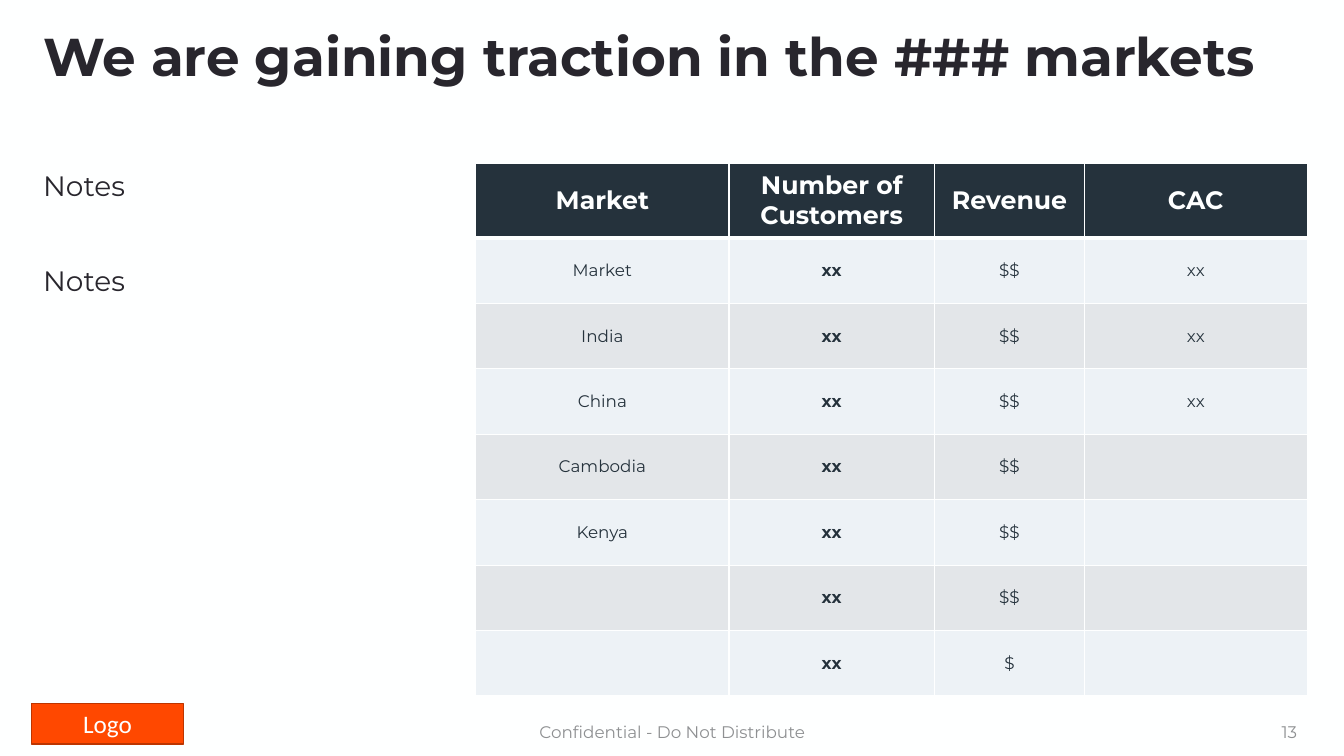
from dataclasses import dataclass

from lxml import etree
from pptx import Presentation
from pptx.dml.color import RGBColor
from pptx.enum.shapes import MSO_SHAPE
from pptx.enum.text import MSO_ANCHOR, MSO_AUTO_SIZE, PP_ALIGN
from pptx.oxml.ns import qn
from pptx.util import Cm, Pt

LEFT, CENTER, RIGHT = PP_ALIGN.LEFT, PP_ALIGN.CENTER, PP_ALIGN.RIGHT
TOP, MIDDLE = MSO_ANCHOR.TOP, MSO_ANCHOR.MIDDLE
NO_AUTOFIT = MSO_AUTO_SIZE.NONE
RECTANGLE = MSO_SHAPE.RECTANGLE
TITLE_ONLY = 5


@dataclass(frozen=True)
class Theme:
    """Fonts, colours and type sizes of the slide."""
    font: str = "Montserrat"
    logo_font: str = "Calibri"
    paper: str = "FEFFFF"
    ink: str = "28262D"
    navy: str = "25323C"
    muted: str = "8E9092"
    orange: str = "FF4800"
    rust: str = "BD3500"
    bands: tuple = ("BECCDD", "939DA9")
    band_opacity: int = 25
    title_size: int = 38
    body_size: int = 20
    heading_size: int = 18
    small_size: int = 12


THEME = Theme()
MARGIN = 0.84
CONTENT_WIDTH = 32.08
CONTENT_TOP = 4.11
CONTENT_HEIGHT = 13.41
FOOTER_TOP = 17.93
FOOTER_HEIGHT = 1.02
TABLE_LEFT = 11.99
COLUMN_WIDTHS = (6.38, 5.18, 3.78, 5.61)
HEADER_HEIGHT, ROW_HEIGHT = 1.88, 1.65
HEADER_RULE, GRID_RULE = 3, 1
CUSTOMERS_COLUMN = 1

TITLE = "We are gaining traction in the ### markets"
REMARKS = "Notes\nNotes"
REMARK_GAP = 44
MARKETS = (
    ("Market", "Number of Customers", "Revenue", "CAC"),
    ("Market", "xx", "$$", "xx"),
    ("India", "xx", "$$", "xx"),
    ("China", "xx", "$$", "xx"),
    ("Cambodia", "xx", "$$", ""),
    ("Kenya", "xx", "$$", ""),
    ("", "xx", "$$", ""),
    ("", "xx", "$", ""),
)


def rgb(value):
    """Turn a hex string into a colour."""
    return RGBColor.from_string(value)


def write(frame, text, size, color, align=LEFT, bold=False, font=THEME.font):
    """Fill a text frame and format its paragraphs and runs."""
    frame.text = text
    for paragraph in frame.paragraphs:
        paragraph.alignment = align
        for run in paragraph.runs:
            run.font.name = font
            run.font.size = Pt(size)
            run.font.bold = bold
            run.font.color.rgb = rgb(color)


def set_title(slide):
    """Place and format the title placeholder."""
    title = slide.shapes.title
    title.left, title.top = Cm(MARGIN), Cm(0.64)
    title.width, title.height = Cm(CONTENT_WIDTH), Cm(1.7)
    frame = title.text_frame
    write(frame, TITLE, THEME.title_size, THEME.ink, bold=True)
    frame.auto_size = NO_AUTOFIT
    frame.vertical_anchor = MIDDLE
    frame.paragraphs[0].line_spacing = 0.9


def add_text(slide, box, text, size, color, align=LEFT, anchor=MIDDLE):
    """Add a wrapping text box and return its frame."""
    frame = slide.shapes.add_textbox(*map(Cm, box)).text_frame
    frame.word_wrap = True
    frame.vertical_anchor = anchor
    write(frame, text, size, color, align)
    return frame


def add_remarks(slide):
    """Add the remarks with a wide gap between them."""
    box = (MARGIN, CONTENT_TOP, CONTENT_WIDTH, CONTENT_HEIGHT)
    remarks = add_text(slide, box, REMARKS, THEME.body_size, THEME.ink, anchor=TOP)
    for paragraph in remarks.paragraphs[1:]:
        paragraph.space_before = Pt(REMARK_GAP)


def add_logo_block(slide):
    """Add the orange block that stands for the logo."""
    block = slide.shapes.add_shape(RECTANGLE, Cm(0.79), Cm(17.73), Cm(3.84), Cm(1.02))
    block.shadow.inherit = False
    block.fill.solid()
    block.fill.fore_color.rgb = rgb(THEME.orange)
    block.line.color.rgb = rgb(THEME.rust)
    block.line.width = Pt(1)
    block.text_frame.vertical_anchor = MIDDLE
    write(block.text_frame, "Logo", THEME.heading_size, THEME.paper, CENTER,
          font=THEME.logo_font)


def fill_cell(cell, color, opacity=100):
    """Give a cell a solid fill with the opacity in percent."""
    cell.fill.solid()
    cell.fill.fore_color.rgb = rgb(color)
    if opacity < 100:
        properties = cell._tc.get_or_add_tcPr()
        tint = properties.find(f"{qn('a:solidFill')}/{qn('a:srgbClr')}")
        etree.SubElement(tint, qn("a:alpha"), val=str(opacity * 1000))


def border_cell(cell, top, bottom):
    """Draw the four borders of a cell, widths in points."""
    properties = cell._tc.get_or_add_tcPr()
    widths = {"a:lnL": GRID_RULE, "a:lnR": GRID_RULE, "a:lnT": top, "a:lnB": bottom}
    for position, (side, width) in enumerate(widths.items()):
        border = etree.Element(qn(side), w=str(Pt(width)))
        fill = etree.SubElement(border, qn("a:solidFill"))
        etree.SubElement(fill, qn("a:srgbClr"), val=THEME.paper)
        properties.insert(position, border)


def format_cell(cell, text, row, column):
    """Write and style one cell by its place in the table."""
    cell.vertical_anchor = MIDDLE
    if row == 0:
        write(cell.text_frame, text, THEME.heading_size, THEME.paper, CENTER, True)
        fill_cell(cell, THEME.navy)
    else:
        write(cell.text_frame, text, THEME.small_size, THEME.navy, CENTER,
              column == CUSTOMERS_COLUMN)
        fill_cell(cell, THEME.bands[(row - 1) % 2], THEME.band_opacity)
    border_cell(cell, HEADER_RULE if row == 1 else GRID_RULE,
                HEADER_RULE if row == 0 else GRID_RULE)


def add_markets_table(slide):
    """Add the table of customers, revenue and CAC by market."""
    table = slide.shapes.add_table(
        len(MARKETS), len(COLUMN_WIDTHS), Cm(TABLE_LEFT), Cm(CONTENT_TOP),
        Cm(sum(COLUMN_WIDTHS)), Cm(CONTENT_HEIGHT)).table
    table.horz_banding = False
    for column, width in zip(table.columns, COLUMN_WIDTHS):
        column.width = Cm(width)
    for row, values in enumerate(MARKETS):
        table.rows[row].height = Cm(ROW_HEIGHT if row else HEADER_HEIGHT)
        for column, text in enumerate(values):
            format_cell(table.cell(row, column), text, row, column)


def main():
    """Build the slide and save it."""
    deck = Presentation()
    deck.slide_width, deck.slide_height = Cm(33.87), Cm(19.05)
    slide = deck.slides.add_slide(deck.slide_layouts[TITLE_ONLY])
    slide.background.fill.solid()
    slide.background.fill.fore_color.rgb = rgb(THEME.paper)
    add_logo_block(slide)
    set_title(slide)
    add_text(slide, (11.23, FOOTER_TOP, 11.43, FOOTER_HEIGHT),
             "Confidential - Do Not Distribute", THEME.small_size, THEME.muted, CENTER)
    add_text(slide, (25.32, FOOTER_TOP, 7.62, FOOTER_HEIGHT),
             "13", THEME.small_size, THEME.muted, RIGHT)
    add_remarks(slide)
    add_markets_table(slide)
    deck.save("out.pptx")


if __name__ == "__main__":
    main()
